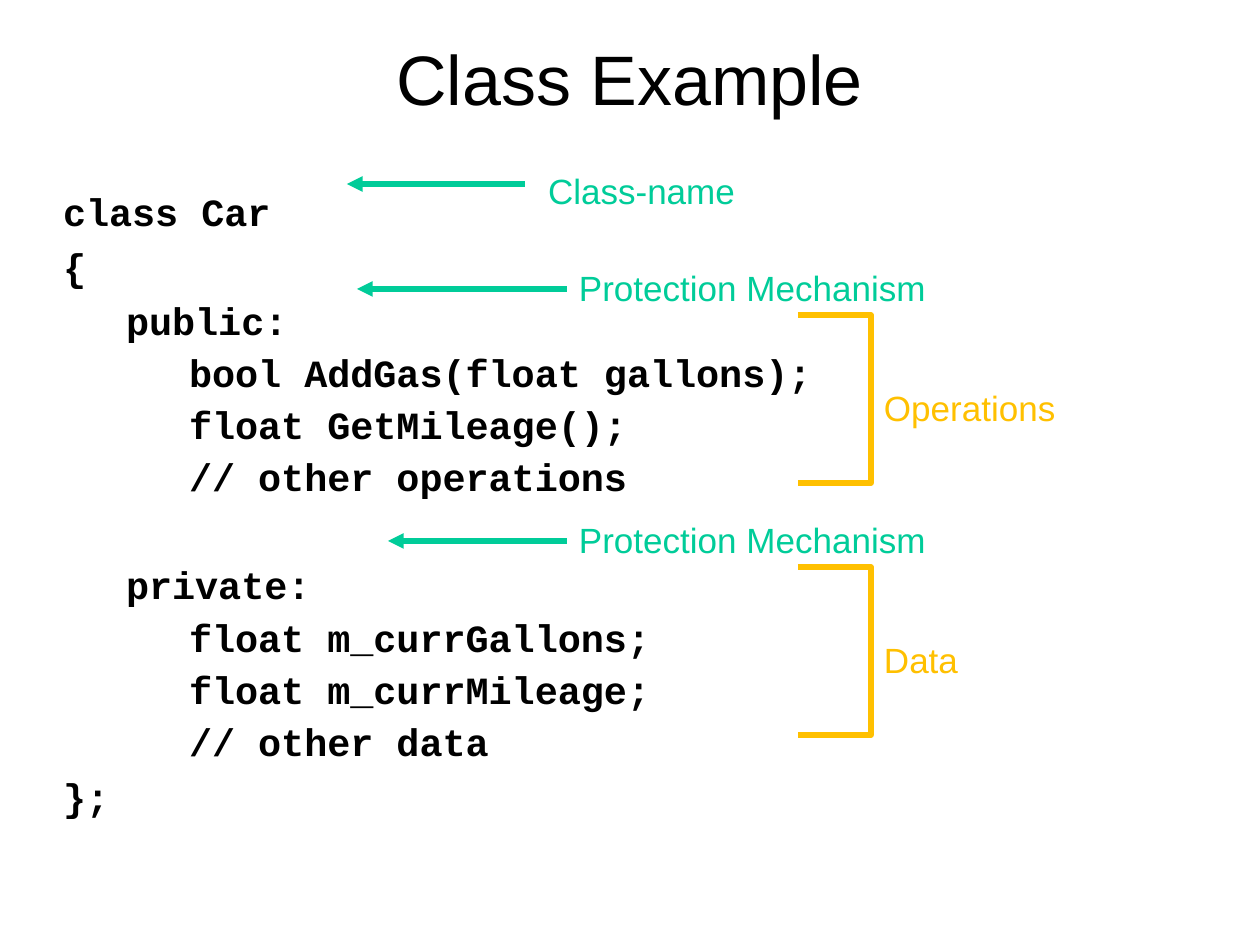
from dataclasses import dataclass
from lxml.etree import SubElement
from pptx import Presentation
from pptx.dml.color import RGBColor
from pptx.enum.shapes import MSO_CONNECTOR
from pptx.enum.text import MSO_ANCHOR, PP_ALIGN
from pptx.oxml.ns import qn
from pptx.util import Pt

PX = 7257  # EMU per px, 126 px to the inch


@dataclass(frozen=True)
class Theme:
    ink: RGBColor = RGBColor(0x00, 0x00, 0x00)
    name: RGBColor = RGBColor(0x00, 0xCC, 0x99)
    group: RGBColor = RGBColor(0xFF, 0xC0, 0x00)
    sans: str = "Arial"
    mono: str = "Courier New"
    title: int = 40
    code: int = 22
    label: int = 20
    line: int = 3


THEME = Theme()

# Content
TITLE = "Class Example"
CODE = [  # level, text
    (0, "class Car"),
    (0, "{"),
    (1, "public:"),
    (2, "bool AddGas(float gallons);"),
    (2, "float GetMileage();"),
    (2, "// other operations"),
    (1, "private:"),
    (2, "float m_currGallons;"),
    (2, "float m_currMileage;"),
    (2, "// other data"),
    (0, "};"),
]
SPACE_BEFORE = (8, 7, 6)  # points, by level
SECTION_GAP = {"private:": 31}  # extra points above a section
ARROWS = [  # text, label left, label top, label width, arrow from x, to x, y
    ("Class-name", 535, 163, 220, 525, 347, 184),
    ("Protection Mechanism", 566, 260, 378, 567, 357, 289),
    ("Protection Mechanism", 566, 512, 378, 567, 388, 541),
]
GROUPS = [("Operations", 315), ("Data", 567)]  # text, bracket top
BRACKET_LEFT, BRACKET_RIGHT, BRACKET_HEIGHT = 798, 871, 168
LABEL_HEIGHT, INSET_X, INSET_Y = 56, 13, 6


def emu(*values):
    return [v * PX for v in values]


def add_box(s, box, insets):
    tf = s.shapes.add_textbox(*emu(*box)).text_frame
    tf.word_wrap = True
    (tf.margin_left, tf.margin_top,
     tf.margin_right, tf.margin_bottom) = emu(*insets)
    return tf


def add_run(p, text, font, size, color, bold=False):
    r = p.add_run()
    r.text = text
    r.font.name, r.font.size, r.font.bold = font, Pt(size), bold
    r.font.color.rgb = color


def add_label(s, text, x, y, w, color):
    tf = add_box(s, (x, y, w, LABEL_HEIGHT), (INSET_X, INSET_Y) * 2)
    add_run(tf.paragraphs[0], text, THEME.sans, THEME.label, color)


def set_line(sp, color):
    sp.line.color.rgb = color
    sp.line.width = Pt(THEME.line)


def add_arrow(s, x1, x2, y):
    sp = s.shapes.add_connector(MSO_CONNECTOR.STRAIGHT, *emu(x1, y, x2, y))
    set_line(sp, THEME.name)
    SubElement(sp.line._get_or_add_ln(), qn("a:tailEnd"), type="triangle")
    SubElement(sp._element.spPr, qn("a:effectLst"))


def add_bracket(s, top):
    bottom = top + BRACKET_HEIGHT
    fb = s.shapes.build_freeform(BRACKET_LEFT, top, scale=PX)
    fb.add_line_segments(
        [(BRACKET_RIGHT, top), (BRACKET_RIGHT, bottom), (BRACKET_LEFT, bottom)],
        close=False)
    sp = fb.convert_to_shape()
    sp.shadow.inherit = False
    sp.fill.background()
    set_line(sp, THEME.group)


def add_title(s):
    tf = add_box(s, (63, 38, 1133, 88), (0, 0, 0, 0))
    tf.vertical_anchor = MSO_ANCHOR.MIDDLE
    p = tf.paragraphs[0]
    p.alignment, p.line_spacing = PP_ALIGN.CENTER, 0.93
    add_run(p, TITLE, THEME.sans, THEME.title, THEME.ink)


def add_code(s):
    tf = add_box(s, (63, 158, 1133, 693), (0, 35, 0, 0))
    for i, (level, text) in enumerate(CODE):
        p = tf.add_paragraph() if i else tf.paragraphs[0]
        p.level = level
        p._p.get_or_add_pPr().set("marL", str(63 * level * PX))
        p.line_spacing = 0.9
        gap = SPACE_BEFORE[level] + SECTION_GAP.get(text, 0)
        p.space_before = Pt(gap if i else 0)
        add_run(p, text, THEME.mono, THEME.code, THEME.ink, bold=True)


def main():
    prs = Presentation()
    prs.slide_width, prs.slide_height = emu(1260, 945)
    s = prs.slides.add_slide(prs.slide_layouts[6])

    add_title(s)
    add_code(s)

    # Brackets with their labels centred alongside
    for text, top in GROUPS:
        add_bracket(s, top)
        label_top = top + (BRACKET_HEIGHT - LABEL_HEIGHT) // 2 + 9
        add_label(s, text, BRACKET_RIGHT, label_top, 210, THEME.group)

    # Arrows with their labels
    for text, x, y, w, start, end, arrow_y in ARROWS:
        add_arrow(s, start, end, arrow_y)
        add_label(s, text, x, y, w, THEME.name)

    prs.save("out.pptx")


if __name__ == "__main__":
    main()
